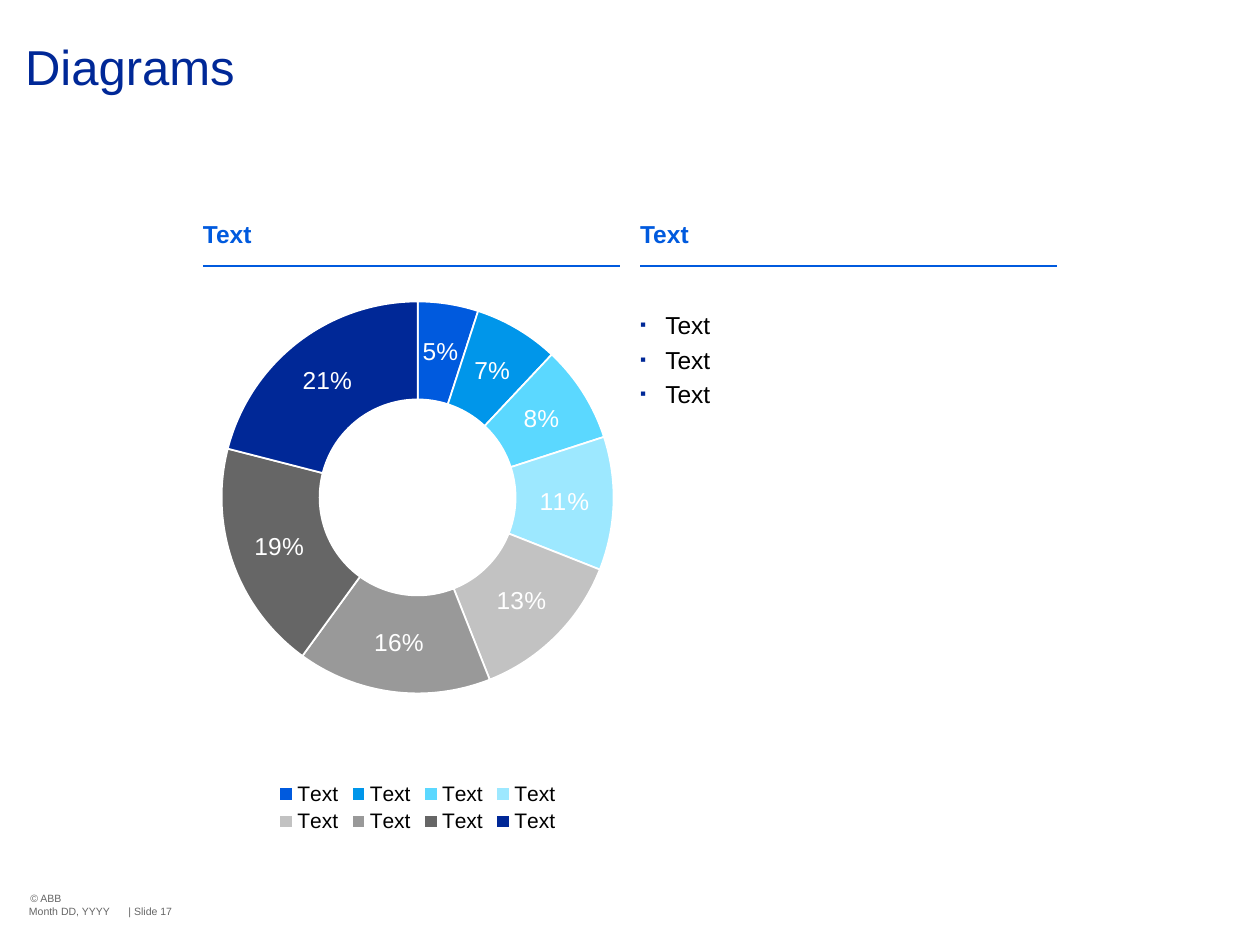
from dataclasses import dataclass
from lxml import etree
from pptx import Presentation, util as u
from pptx.chart.data import CategoryChartData
from pptx.dml.color import RGBColor
from pptx.enum import chart as ch, shapes, text
from pptx.oxml import parse_xml
from pptx.oxml.ns import nsdecls, qn

NAVY = RGBColor(0x00, 0x28, 0x97)
BLUE = RGBColor(0x00, 0x5A, 0xDE)
SKY = RGBColor(0x00, 0x96, 0xEA)
CYAN = RGBColor(0x5B, 0xD8, 0xFF)
ICE = RGBColor(0x9D, 0xE8, 0xFF)
SILVER = RGBColor(0xC2, 0xC2, 0xC2)
GRAY = RGBColor(0x99, 0x99, 0x99)
DARK = RGBColor(0x66, 0x66, 0x66)
BLACK = RGBColor(0, 0, 0)
WHITE = RGBColor(0xFF, 0xFF, 0xFF)
FONT = "Arial"

# Grid of 100 columns by 75 rows
WIDE, HIGH = u.Inches(10), u.Inches(7.5)
COLS, ROWS = 100, 75
LEFT, RIGHT, SPAN = 16.1, 50.8, 33.1
HEAD, RULE = 17.4, 21.1


def col(n: float) -> int:
    return round(WIDE * n / COLS)


def row(n: float) -> int:
    return round(HIGH * n / ROWS)


@dataclass
class Label:
    lines: list[str]
    x: float
    y: float
    w: float
    h: float
    size: float
    color: RGBColor
    bold: bool = False
    wrap: bool = True
    bullet: bool = False
    pad: tuple = (0, 0, 0, 0)
    lead: float = 1.0


def add_bullet(para) -> None:
    props = para._p.get_or_add_pPr()
    props.set("marL", str(col(2)))
    props.set("indent", str(-col(2)))
    tint = etree.SubElement(props, qn("a:buClr"))
    etree.SubElement(tint, qn("a:srgbClr"), val=str(NAVY))
    etree.SubElement(props, qn("a:buSzPct"), val="70000")
    etree.SubElement(props, qn("a:buFont"), typeface=FONT)
    etree.SubElement(props, qn("a:buChar"), char="▪")


def add_label(slide, lab: Label) -> None:
    box = slide.shapes.add_textbox(col(lab.x), row(lab.y), col(lab.w), row(lab.h))
    frame = box.text_frame
    frame.word_wrap = lab.wrap
    frame.vertical_anchor = text.MSO_ANCHOR.TOP
    left, top, right, base = lab.pad
    frame.margin_left, frame.margin_right = col(left), col(right)
    frame.margin_top, frame.margin_bottom = row(top), row(base)
    for i, line in enumerate(lab.lines):
        para = frame.add_paragraph() if i else frame.paragraphs[0]
        if lab.bullet:
            add_bullet(para)
        para.line_spacing = lab.lead
        if i:
            para.space_before = u.Pt(3)
        run = para.add_run()
        run.text = line
        font = run.font
        font.name, font.size, font.bold = FONT, u.Pt(lab.size), lab.bold
        font.color.rgb = lab.color


def add_rule(slide, x: float) -> None:
    line = slide.shapes.add_connector(
        shapes.MSO_CONNECTOR.STRAIGHT, col(x), row(RULE), col(x + SPAN), row(RULE))
    line.line.color.rgb = BLUE
    line.line.width = u.Pt(1)
    etree.SubElement(line._element.spPr, qn("a:effectLst"))


def set_font(font, size: float, color: RGBColor) -> None:
    font.name, font.size = FONT, u.Pt(size)
    font.color.rgb = color


def add_ring(slide, slices: list[tuple[int, RGBColor]]) -> None:
    data = CategoryChartData()
    data.categories = ["Text"] * len(slices)
    data.add_series("Series 1", [value for value, _ in slices])
    chart = slide.shapes.add_chart(
        ch.XL_CHART_TYPE.DOUGHNUT, col(16.6), row(21.1), col(SPAN), row(45.4), data).chart
    chart.has_title = False
    set_font(chart.font, 14, BLACK)
    chart.has_legend = True
    chart.legend.position = ch.XL_LEGEND_POSITION.BOTTOM
    chart.legend.include_in_layout = False
    set_font(chart.legend.font, 12, BLACK)

    # Slices and their shares
    plot = chart.plots[0]
    plot.vary_by_categories = True
    for i, (_, color) in enumerate(slices):
        form = plot.series[0].points[i].format
        form.fill.solid()
        form.fill.fore_color.rgb = color
        form.line.color.rgb = WHITE
        form.line.width = u.Pt(1)
    plot.has_data_labels = True
    tags = plot.data_labels
    tags.show_percentage, tags.show_value = True, False
    tags.number_format, tags.number_format_is_linked = "0%", False
    set_font(tags.font, 14, WHITE)

    # Place of the ring inside the chart
    area = chart._chartSpace.chart.plotArea
    for old in area.findall(qn("c:layout")):
        area.remove(old)
    sides = {"x": 0.03, "y": 0.05, "w": 0.94, "h": 0.71}
    parts = '<c:layoutTarget val="inner"/><c:xMode val="edge"/><c:yMode val="edge"/>'
    parts += "".join(f'<c:{key} val="{val}"/>' for key, val in sides.items())
    area.insert(0, parse_xml(
        f'<c:layout {nsdecls("c")}><c:manualLayout>{parts}</c:manualLayout></c:layout>'))


def main() -> None:
    deck = Presentation()
    deck.slide_width, deck.slide_height = WIDE, HIGH
    slide = deck.slides.add_slide(deck.slide_layouts[6])

    # Title and footer
    add_label(slide, Label(["Diagrams"], 0, 0, 100, 17.4, 28, NAVY,
                           pad=(2, 3.4, 2.4, 0), lead=0.9))
    add_label(slide, Label(["© ABB"], 2.4, 70.8, 12.2, 1, 6, DARK, wrap=False))
    add_label(slide, Label(["Month DD, YYYY"], 2.3, 71.8, 8, 1, 6, DARK, wrap=False))
    add_label(slide, Label(["| Slide 17"], 10.2, 71.8, 5.3, 1, 6, DARK))

    # Column heads
    for x in (LEFT, RIGHT):
        add_label(slide, Label(["Text"], x, HEAD, SPAN, 2.4, 14, BLUE, bold=True))
        add_rule(slide, x)

    # Ring chart and list
    add_ring(slide, [(5, BLUE), (7, SKY), (8, CYAN), (11, ICE),
                     (13, SILVER), (16, GRAY), (19, DARK), (21, NAVY)])
    add_label(slide, Label(["Text"] * 3, RIGHT, 24.6, SPAN, 7.9, 14, BLACK, bullet=True))

    deck.save("out.pptx")


if __name__ == "__main__":
    main()
